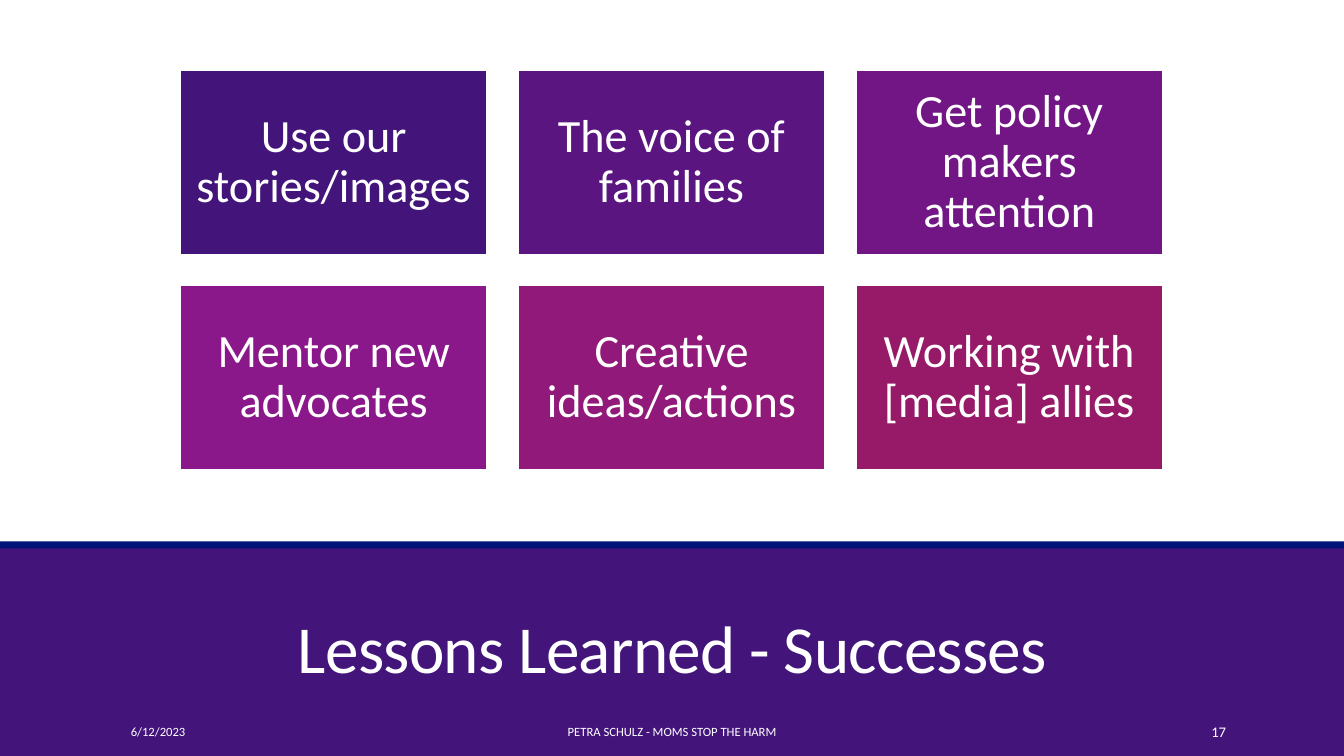
from pptx import Presentation
from pptx.dml.color import RGBColor as RGB
from pptx.enum.shapes import MSO_SHAPE as Shape
from pptx.enum.text import MSO_ANCHOR as Anchor, MSO_AUTO_SIZE as Auto, PP_ALIGN as Align
from pptx.util import Inches, Pt

WHITE = RGB(0xFF, 0xFF, 0xFF)
PURPLE = RGB(0x43, 0x14, 0x7A)
NAVY = RGB(0x01, 0x12, 0x78)
CARDS = [
    ("Use our stories/images", PURPLE),
    ("The voice of families", RGB(0x5A, 0x15, 0x80)),
    ("Get policy makers attention", RGB(0x72, 0x16, 0x86)),
    ("Mentor new advocates", RGB(0x8B, 0x18, 0x8A)),
    ("Creative ideas/actions", RGB(0x91, 0x19, 0x7A)),
    ("Working with [media] allies", RGB(0x97, 0x1A, 0x68)),
]


def write(shape, text, size, align=Align.CENTER, anchor=Anchor.MIDDLE,
          space=1, track=0, inset=None):
    frame = shape.text_frame
    frame.word_wrap = True
    frame.auto_size = Auto.NONE
    frame.vertical_anchor = anchor
    if inset is not None:
        frame.margin_left = frame.margin_right = Inches(inset)
        frame.margin_top = frame.margin_bottom = Inches(inset)
    para = frame.paragraphs[0]
    para.alignment = align
    para.line_spacing = space
    run = para.add_run()
    run.text = text
    run.font.name = "Calibri"
    run.font.size = Pt(size)
    run.font.color.rgb = WHITE
    if track:
        run.font._element.set("spc", str(int(track * 100)))


def block(slide, left, top, width, height, fill, edge=None):
    rect = slide.shapes.add_shape(
        Shape.RECTANGLE, Inches(left), Inches(top), Inches(width), Inches(height))
    rect.shadow.inherit = False
    rect.fill.solid()
    rect.fill.fore_color.rgb = fill
    if edge is None:
        rect.line.fill.background()
    else:
        rect.line.color.rgb = edge
        rect.line.width = Pt(1.25)
    return rect


def grid(slide, left, top, width, height, cols=3, gap=0.31, vgap=0.3):
    rows = len(CARDS) // cols
    wide = (width - gap * (cols - 1)) / cols
    high = (height - vgap * (rows - 1)) / rows
    for i, (text, fill) in enumerate(CARDS):
        row, col = divmod(i, cols)
        card = block(slide, left + col * (wide + gap), top + row * (high + vgap),
                     wide, high, fill, WHITE)
        write(card, text, 33, space=0.9, inset=0.14)


def banner(slide, left, top, width, height):
    block(slide, left, top + 0.05, width, height - 0.05, PURPLE)
    block(slide, left, top, width, 0.07, NAVY)
    title = slide.shapes.title
    title.left, title.top = Inches(left + 1.17), Inches(top + 0.37)
    title.width, title.height = Inches(11), Inches(1.13)
    tree = slide.shapes._spTree
    tree.remove(title._element)
    tree.append(title._element)
    write(title, "Lessons Learned - Successes", 48, anchor=Anchor.BOTTOM,
          space=0.85, track=-0.5)


def footer(slide, left, top, height):
    parts = [
        (0, 2.7, "6/12/2023", 9, Align.LEFT),
        (2.83, 5.27, "PETRA SCHULZ - MOMS STOP THE HARM", 9, Align.CENTER),
        (9.63, 1.43, "17", 10.5, Align.RIGHT),
    ]
    for shift, width, text, size, align in parts:
        box = slide.shapes.add_textbox(
            Inches(left + shift), Inches(top), Inches(width), Inches(height))
        write(box, text, size, align)


def main():
    deck = Presentation()
    deck.slide_width, deck.slide_height = Inches(13.33), Inches(7.5)
    slide = deck.slides.add_slide(deck.slide_layouts[5])
    slide.background.fill.solid()
    slide.background.fill.fore_color.rgb = WHITE
    banner(slide, 0, 5.37, 13.33, 2.13)
    footer(slide, 1.2, 7.06, 0.4)
    grid(slide, 1.79, 0.7, 9.74, 3.96)
    deck.save("out.pptx")


if __name__ == "__main__":
    main()
